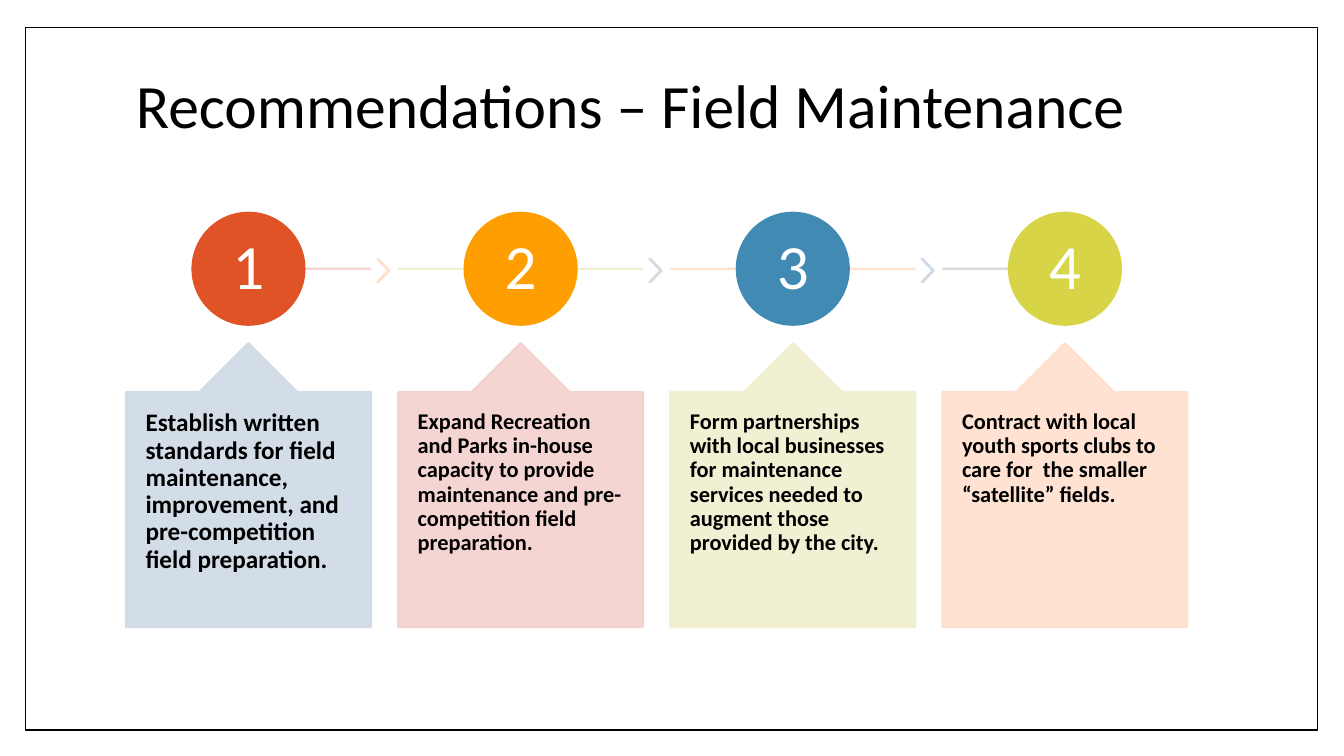
from dataclasses import dataclass
from pptx import Presentation
from pptx.dml.color import RGBColor
from pptx.enum.shapes import MSO_CONNECTOR, MSO_SHAPE
from pptx.enum.text import MSO_ANCHOR, PP_ALIGN
from pptx.oxml.xmlchemy import OxmlElement
from pptx.util import Pt


@dataclass(frozen=True)
class Theme:
    font: str = "Calibri"
    black: str = "000000"
    white: str = "FFFFFF"
    red: str = "DF5327"
    gold: str = "FE9E00"
    blue: str = "418AB3"
    lime: str = "D7D447"
    rose: str = "F3D1CD"
    peach: str = "FFDFCC"
    mist: str = "CFDAE5"
    cream: str = "F0EFCF"
    grey: str = "D8D8D9"
    title: float = 44
    digit: float = 45
    lead: float = 18
    body: float = 16


class Board:
    def __init__(self, slide, theme):
        self.slide = slide
        self.theme = theme

    def tint(self, fmt, color, alpha):
        fmt.solid()
        fmt.fore_color.rgb = RGBColor.from_string(color)
        if alpha < 100:
            node = OxmlElement("a:alpha")
            node.set("val", str(alpha * 1000))
            for tag in fmt._xPr.iter("{*}srgbClr"):
                if len(tag) == 0:
                    tag.append(node)

    def shape(self, kind, box, fill, edge=None, width=1.5, alpha=100, adjust=()):
        item = self.slide.shapes.add_shape(kind, *map(Pt, box))
        item.shadow.inherit = False
        self.tint(item.fill, fill, alpha)
        self.tint(item.line.fill, edge or fill, alpha)
        item.line.width = Pt(width)
        for spot, value in enumerate(adjust):
            item.adjustments[spot] = value
        return item

    def rule(self, left, right, y, color):
        item = self.slide.shapes.add_connector(
            MSO_CONNECTOR.STRAIGHT, *map(Pt, (left, y, right, y)))
        self.tint(item.line.fill, color, 90)
        item.line.width = Pt(1.5)
        item._element.spPr.append(OxmlElement("a:effectLst"))

    def letter(self, item, text, size, color, pads, bold=False,
               align=PP_ALIGN.LEFT, anchor=MSO_ANCHOR.TOP):
        frame = item.text_frame
        sides = ("margin_left", "margin_top", "margin_right", "margin_bottom")
        para = frame.paragraphs[0]
        para.text = text
        font = para.runs[0].font
        font.color.rgb = RGBColor.from_string(color)
        looks = (
            (frame, {"word_wrap": True, "vertical_anchor": anchor,
                     **dict(zip(sides, map(Pt, pads)))}),
            (para, {"alignment": align, "line_spacing": 0.9}),
            (font, {"name": self.theme.font, "size": Pt(size), "bold": bold}),
        )
        for target, look in looks:
            for name, value in look.items():
                setattr(target, name, value)

    def label(self, box, text, size, pads):
        item = self.slide.shapes.add_textbox(*map(Pt, box))
        self.letter(item, text, size, self.theme.black, pads)

    def disc(self, mid, y, color, text):
        item = self.shape(MSO_SHAPE.OVAL, (mid - 40, y - 40, 80, 80), color)
        self.letter(item, text, self.theme.digit, self.theme.white, (3, 3, 3, 3),
                    align=PP_ALIGN.CENTER, anchor=MSO_ANCHOR.MIDDLE)

    def card(self, box, color, text, size):
        item = self.shape(MSO_SHAPE.UP_ARROW_CALLOUT, box, color, alpha=90,
                          adjust=(0.5, 0.2, 0.2, 1))
        self.letter(item, text, size, self.theme.black, (14, 13, 14, 13), bold=True)


def main():
    deck = Presentation()
    deck.slide_width, deck.slide_height = Pt(960), Pt(540)
    theme = Theme()
    board = Board(deck.slides.add_slide(deck.slide_layouts[6]), theme)

    board.shape(MSO_SHAPE.RECTANGLE, (18, 19.5, 923, 502), theme.white, theme.black, 1)
    board.label((90, 48.5, 777.5, 106), "Recommendations – Field Maintenance",
                theme.title, (7.2, 5, 7.2, 3.6))

    steps = (
        (theme.red, theme.mist, theme.rose, theme.peach, theme.lead,
         "Establish written standards for field maintenance, improvement, "
         "and pre-competition field preparation."),
        (theme.gold, theme.rose, theme.cream, theme.grey, theme.body,
         "Expand Recreation and Parks in-house capacity to provide maintenance "
         "and pre-competition field preparation."),
        (theme.blue, theme.cream, theme.peach, theme.mist, theme.body,
         "Form partnerships with local businesses for maintenance services "
         "needed to augment those provided by the city."),
        (theme.lime, theme.peach, theme.grey, None, theme.body,
         "Contract with local youth sports clubs to care for  the smaller "
         "“satellite” fields."),
    )
    first, pitch, width, axis = 90, 194.4, 175, 192
    last = len(steps) - 1
    for spot, (color, pale, rule, arrow, size, text) in enumerate(steps):
        left = first + spot * pitch
        mid = left + width / 2
        start = mid if spot == 0 else left
        end = mid if spot == last else left + width
        board.rule(start, end, axis, rule)
        if arrow:
            board.shape(MSO_SHAPE.CHEVRON, (left + 179.5, axis - 7, 8.75, 16.5),
                        arrow, alpha=90, adjust=(0.9,))
        board.disc(mid, axis, color, str(spot + 1))
        board.card((left, 245, width, 203), pale, text, size)

    deck.save("out.pptx")


if __name__ == "__main__":
    main()
